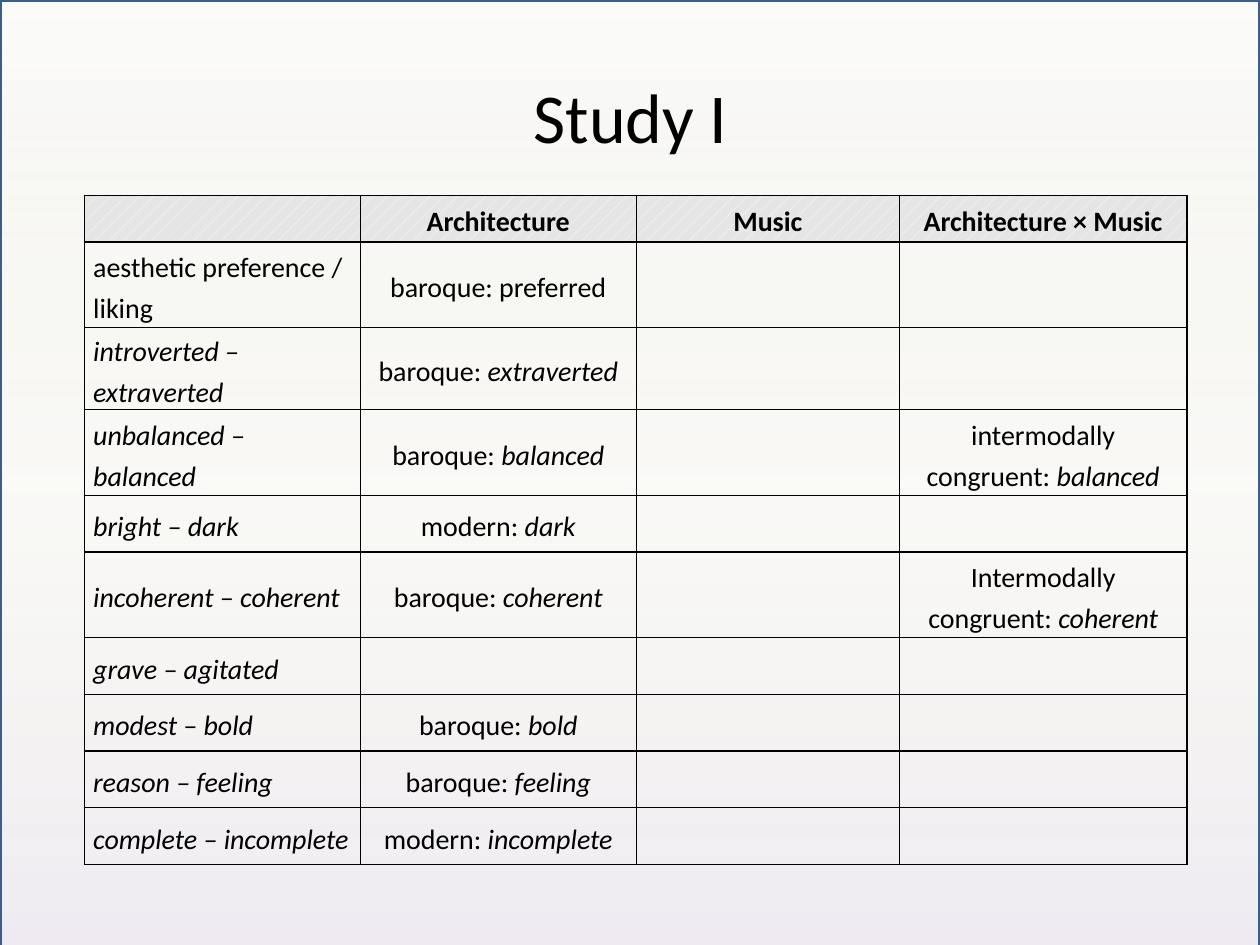
from lxml import etree
from pptx import Presentation
from pptx import util as u
from pptx.dml.color import RGBColor
from pptx.enum import dml, shapes, text
from pptx.oxml.ns import qn

HUES = {"ink": "000000", "edge": "3A5F8C", "head": "E5E5E5", "dots": "FFFFFF",
        "top": "F2F2F2", "mid": "C4BD97", "base": "B3A2C7"}
FADE = [(0, "top", 30), (50, "mid", 7), (100, "base", 22)]  # place, hue, opacity
FONT = "Calibri"
COLS = [2.19, 2.19, 2.09, 2.28]
ROWS = [0.37, 0.68, 0.45, 0.68, 0.45, 0.68] + [0.45] * 4
HEADS = ["", "Architecture", "Music", "Architecture × Music"]
# Text between asterisks is italic.
BODY = [
    ["aesthetic preference / liking", "baroque: preferred"],
    ["*introverted – extraverted*", "baroque: *extraverted*"],
    ["*unbalanced – balanced*", "baroque: *balanced*", "",
     "intermodally congruent: *balanced*"],
    ["*bright – dark*", "modern: *dark*"],
    ["*incoherent – coherent*", "baroque: *coherent*", "",
     "Intermodally congruent: *coherent*"],
    ["*grave – agitated*"],
    ["*modest – bold*", "baroque: *bold*"],
    ["*reason – feeling*", "baroque: *feeling*"],
    ["*complete – incomplete*", "modern: *incomplete*"],
]


def hue(name):
    return RGBColor.from_string(HUES[name])


def sub(node, tag, **attrs):
    return etree.SubElement(node, qn(tag), {k: str(v) for k, v in attrs.items()})


def add_backdrop(slide, box):
    rect = slide.shapes.add_shape(shapes.MSO_SHAPE.RECTANGLE, *box)
    rect.shadow.inherit = False
    rect.line.color.rgb = hue("edge")
    rect.line.width = u.Pt(2)
    rect.fill.gradient()
    rect.fill.gradient_angle = 270
    stops = rect._element.spPr.find(qn("a:gradFill")).find(qn("a:gsLst"))
    for old in list(stops):
        stops.remove(old)
    for place, name, alpha in FADE:
        stop = sub(stops, "a:gs", pos=place * 1000)
        tint = sub(stop, "a:srgbClr", val=HUES[name])
        sub(tint, "a:alpha", val=alpha * 1000)
    slide.shapes._spTree.insert(2, rect._element)


def set_title(slide, box, words):
    title = slide.shapes.title
    title.left, title.top, title.width, title.height = box
    title.text_frame.text = words
    title.text_frame.vertical_anchor = text.MSO_ANCHOR.MIDDLE
    para = title.text_frame.paragraphs[0]
    para.alignment = text.PP_ALIGN.CENTER
    para.font.size, para.font.name = u.Pt(40), FONT
    para.font.color.rgb = hue("ink")


def set_edges(cell):
    props = cell._tc.get_or_add_tcPr()
    for spot, side in enumerate("LRTB"):
        line = etree.Element(qn(f"a:ln{side}"), w=str(u.Pt(1)))
        sub(sub(line, "a:solidFill"), "a:srgbClr", val=HUES["ink"])
        props.insert(spot, line)


def fill_cell(cell, words, head, first):
    cell.margin_left = cell.margin_right = u.Inches(0.07)
    cell.margin_top = cell.margin_bottom = 0
    cell.vertical_anchor = text.MSO_ANCHOR.MIDDLE
    if head:
        cell.fill.patterned()
        cell.fill.pattern = dml.MSO_PATTERN.PERCENT_10
        cell.fill.fore_color.rgb = hue("dots")
        cell.fill.back_color.rgb = hue("head")
    else:
        cell.fill.background()
    set_edges(cell)
    para = cell.text_frame.paragraphs[0]
    para.font.size, para.font.name = u.Pt(16), FONT
    para.font.bold = head
    para.font.color.rgb = hue("ink")
    if not words:
        return
    para.alignment = text.PP_ALIGN.LEFT if first else text.PP_ALIGN.CENTER
    para.line_spacing = 1.2
    para.space_before = para.space_after = u.Pt(4)
    for turn, part in enumerate(words.split("*")):
        if part:
            run = para.add_run()
            run.text = part
            run.font.italic = turn % 2 == 1


def add_grid(slide, box):
    """Fit the columns to the box's width and the rows to its height."""
    left, top, width, height = box
    grid = slide.shapes.add_table(len(ROWS), len(COLS), *box).table
    grid.first_row = grid.horz_banding = False
    for col, share in zip(grid.columns, COLS):
        col.width = int(width * share / sum(COLS))
    for row, share in zip(grid.rows, ROWS):
        row.height = int(height * share / sum(ROWS))
    for r, line in enumerate([HEADS] + BODY):
        for c in range(len(COLS)):
            words = line[c] if c < len(line) else ""
            fill_cell(grid.cell(r, c), words, r == 0, c == 0)


def main():
    deck = Presentation()
    deck.slide_width, deck.slide_height = u.Inches(10), u.Inches(7.5)
    wide, high = deck.slide_width, deck.slide_height

    def area(x, y, w, h):
        """Turn shares of the slide into lengths."""
        return int(x * wide), int(y * high), int(w * wide), int(h * high)

    slide = deck.slides.add_slide(deck.slide_layouts[5])
    add_backdrop(slide, area(0, 0, 1, 1.025))
    set_title(slide, area(0.114, 0.039, 0.773, 0.167), "Study I")
    add_grid(slide, (u.Inches(0.67), u.Inches(1.55),
                     u.Inches(sum(COLS)), u.Inches(sum(ROWS))))
    deck.save("out.pptx")


if __name__ == "__main__":
    main()
